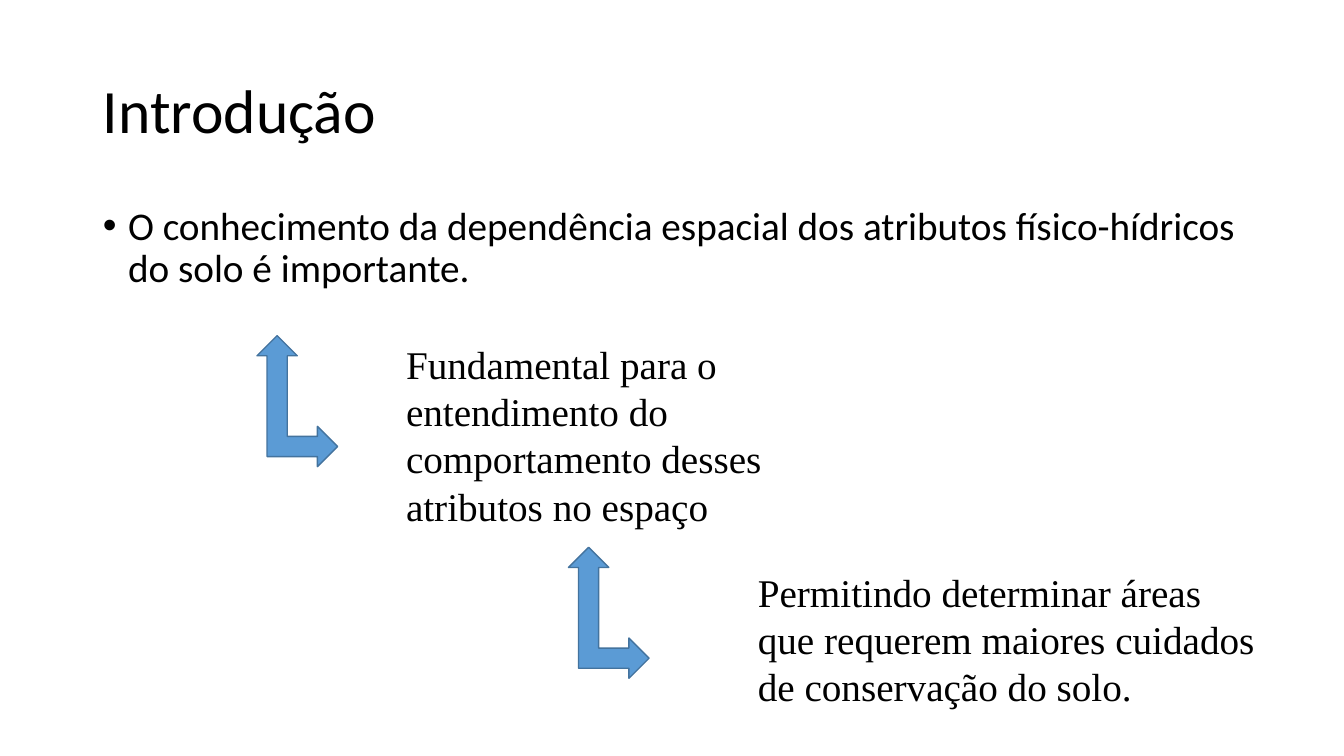
"""Builds the introduction slide with two stepped consequences."""
from pptx import Presentation
from pptx.dml.color import RGBColor
from pptx.enum.shapes import MSO_SHAPE
from pptx.enum.text import MSO_ANCHOR, MSO_AUTO_SIZE, PP_ALIGN
from pptx.oxml.ns import qn
from pptx.util import Pt

COLORS = {"text": "000000", "arrow": "5B9BD5", "outline": "43739E"}
HEADING = ("Introdução", (66.24, 28.8, 828, 104.4))
STATEMENT = (
    "O conhecimento da dependência espacial dos atributos físico-hídricos do solo é importante.",
    (66.24, 144, 828, 69.84),
)
CONSEQUENCES = [
    ("Fundamental para o entendimento do comportamento desses atributos no espaço",
     (282.96, 239.76, 279.36, 143.28), (183.6, 239.76)),
    ("Permitindo determinar áreas que requerem maiores cuidados de conservação do solo.",
     (534.24, 402.48, 372.24, 108.72), (406.08, 390.96)),
]
ARROW_SIZE = (57.6, 93.6)
HEADING_FORMAT = {"alignment": PP_ALIGN.LEFT, "line_spacing": 0.9}
STATEMENT_FORMAT = HEADING_FORMAT | {"space_before": Pt(10)}
CONSEQUENCE_FORMAT = {"alignment": PP_ALIGN.LEFT}


def points(values):
    return [Pt(value) for value in values]


def write(holder, wording, size, typeface, layout):
    frame = holder.text_frame
    frame.text = wording
    frame.word_wrap = True
    frame.auto_size = MSO_AUTO_SIZE.NONE
    paragraph = frame.paragraphs[0]
    for name, value in layout.items():
        setattr(paragraph, name, value)
    font = paragraph.runs[0].font
    for name, value in {"size": Pt(size), "name": typeface}.items():
        setattr(font, name, value)
    font.color.rgb = RGBColor.from_string(COLORS["text"])
    return paragraph


def place(holder, box):
    for name, value in zip(("left", "top", "width", "height"), points(box)):
        setattr(holder, name, value)


def add_arrow(slide, corner):
    arrow = slide.shapes.add_shape(MSO_SHAPE.LEFT_UP_ARROW, *points(corner + ARROW_SIZE))
    arrow.shadow.inherit = False
    arrow.fill.solid()
    arrow.fill.fore_color.rgb = RGBColor.from_string(COLORS["arrow"])
    arrow.line.color.rgb = RGBColor.from_string(COLORS["outline"])
    arrow.line.width = Pt(1)
    arrow.element.spPr.find(qn("a:xfrm")).set("flipH", "1")


def main():
    deck = Presentation()
    deck.slide_width, deck.slide_height = points((960, 540))
    slide = deck.slides.add_slide(deck.slide_layouts[1])

    heading, statement = slide.shapes.title, slide.placeholders[1]
    place(heading, HEADING[1])
    write(heading, HEADING[0], 44, "Calibri", HEADING_FORMAT)
    heading.text_frame.vertical_anchor = MSO_ANCHOR.MIDDLE

    place(statement, STATEMENT[1])
    bullet = write(statement, STATEMENT[0], 28, "Calibri", STATEMENT_FORMAT)
    indents = bullet._p.get_or_add_pPr()
    for name, value in {"marL": Pt(18), "indent": Pt(-18)}.items():
        indents.set(name, str(value))

    for wording, box, corner in CONSEQUENCES:
        consequence = slide.shapes.add_textbox(*points(box))
        write(consequence, wording, 28, "Times New Roman", CONSEQUENCE_FORMAT)
        consequence.text_frame.auto_size = MSO_AUTO_SIZE.SHAPE_TO_FIT_TEXT
        add_arrow(slide, corner)

    deck.save("out.pptx")


if __name__ == "__main__":
    main()
